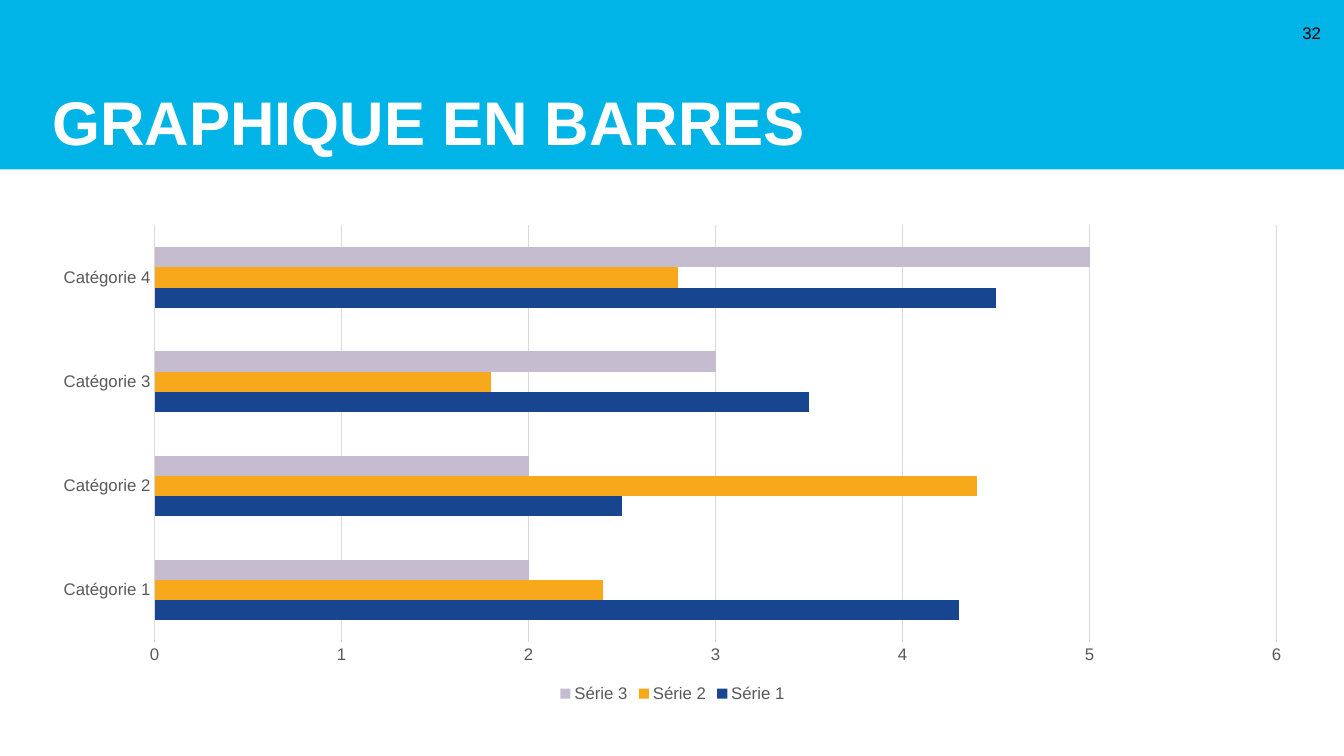
from pptx import Presentation, util as u
from pptx.chart.data import CategoryChartData
from pptx.dml.color import RGBColor
from pptx.enum import chart as ch, shapes, text

SKY = RGBColor(0x01, 0xB4, 0xE7)
WHITE = RGBColor(0xFF, 0xFF, 0xFF)
BLACK = RGBColor(0, 0, 0)
GREY = RGBColor(0x59, 0x59, 0x59)
RULE = RGBColor(0xD9, 0xD9, 0xD9)
NAVY = RGBColor(0x17, 0x45, 0x8F)
AMBER = RGBColor(0xF7, 0xA8, 0x1B)
LILAC = RGBColor(0xC6, 0xBC, 0xD0)

FONT = "Arial"
WIDTH, HEIGHT = 13.33, 7.5
BANNER = (0, 0, WIDTH, 1.68)
CHART = (0.38, 2.14, 12.58, 4.87)

CATEGORIES = [f"Catégorie\u00a0{n}" for n in range(1, 5)]
SERIES = [
    ("Série\u00a01", (4.3, 2.5, 3.5, 4.5), NAVY),
    ("Série\u00a02", (2.4, 4.4, 1.8, 2.8), AMBER),
    ("Série\u00a03", (2, 2, 3, 5), LILAC),
]


def inches(box):
    return [u.Inches(length) for length in box]


def style_font(font, size, color, bold=False):
    font.name, font.size, font.bold = FONT, u.Pt(size), bold
    font.color.rgb = color


def add_label(page, box, words, size, color, anchor, align, bold=False):
    """Add one line of text and return its frame."""
    frame = page.shapes.add_textbox(*inches(box)).text_frame
    frame.word_wrap = True
    frame.vertical_anchor = anchor
    para = frame.paragraphs[0]
    para.alignment = align
    span = para.add_run()
    span.text = words
    style_font(span.font, size, color, bold)
    return frame


def add_banner(page, box, title, number):
    left, top, width, height = box
    band = page.shapes.add_shape(shapes.MSO_SHAPE.RECTANGLE, *inches(box))
    band.shadow.inherit = False
    band.fill.solid()
    band.fill.fore_color.rgb = SKY
    band.line.fill.background()

    frame = add_label(page, (left + 0.42, top, width - 0.75, height), title, 44, WHITE,
                      text.MSO_ANCHOR.BOTTOM, text.PP_ALIGN.LEFT, bold=True)
    frame.margin_top = 0
    frame.margin_bottom = u.Inches(0.1)
    frame.paragraphs[0].line_spacing = 0.9
    add_label(page, (left + width - 0.59, top + 0.13, 0.46, 0.4), number, 12, BLACK,
              text.MSO_ANCHOR.MIDDLE, text.PP_ALIGN.RIGHT)


def style_axis(axis):
    axis.major_tick_mark = axis.minor_tick_mark = ch.XL_TICK_MARK.NONE
    style_font(axis.tick_labels.font, 12, GREY)


def add_bar_chart(page, box):
    data = CategoryChartData()
    data.categories = CATEGORIES
    for name, values, _ in SERIES:
        data.add_series(name, values)
    chart = page.shapes.add_chart(
        ch.XL_CHART_TYPE.BAR_CLUSTERED, *inches(box), data).chart
    style_font(chart.font, 10, BLACK)
    chart.has_title = False

    plot = chart.plots[0]
    plot.gap_width, plot.overlap = 219, 0
    plot.vary_by_categories = False
    for series, (_, _, color) in zip(plot.series, SERIES):
        series.format.fill.solid()
        series.format.fill.fore_color.rgb = color

    style_axis(chart.category_axis)
    style_axis(chart.value_axis)
    chart.value_axis.has_major_gridlines = True
    chart.value_axis.format.line.fill.background()
    for line in (chart.category_axis.format.line,
                 chart.value_axis.major_gridlines.format.line):
        line.color.rgb = RULE
        line.width = u.Pt(0.75)

    chart.has_legend = True
    chart.legend.position = ch.XL_LEGEND_POSITION.BOTTOM
    chart.legend.include_in_layout = False
    style_font(chart.legend.font, 12, GREY)


def main():
    deck = Presentation()
    deck.slide_width, deck.slide_height = inches((WIDTH, HEIGHT))
    page = deck.slides.add_slide(deck.slide_layouts[6])
    add_banner(page, BANNER, "GRAPHIQUE EN BARRES", "32")
    add_bar_chart(page, CHART)
    deck.save("out.pptx")


if __name__ == "__main__":
    main()
